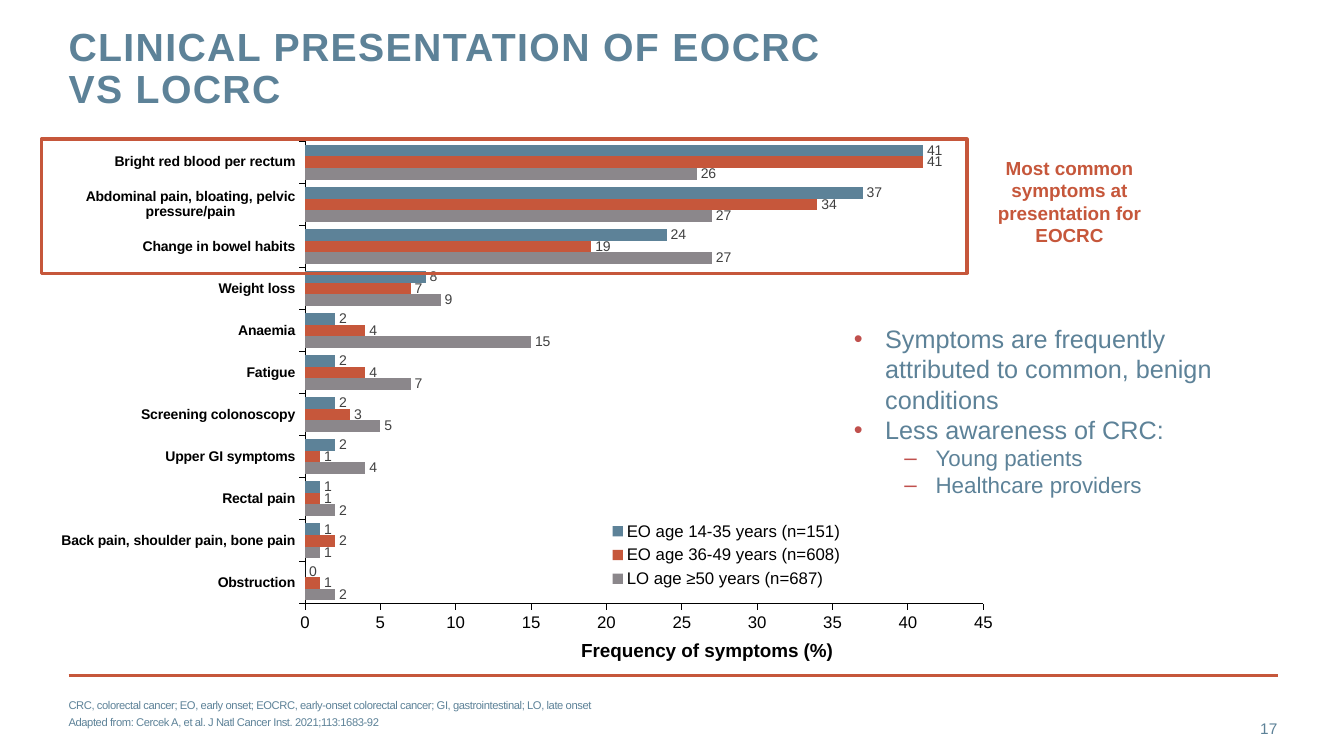
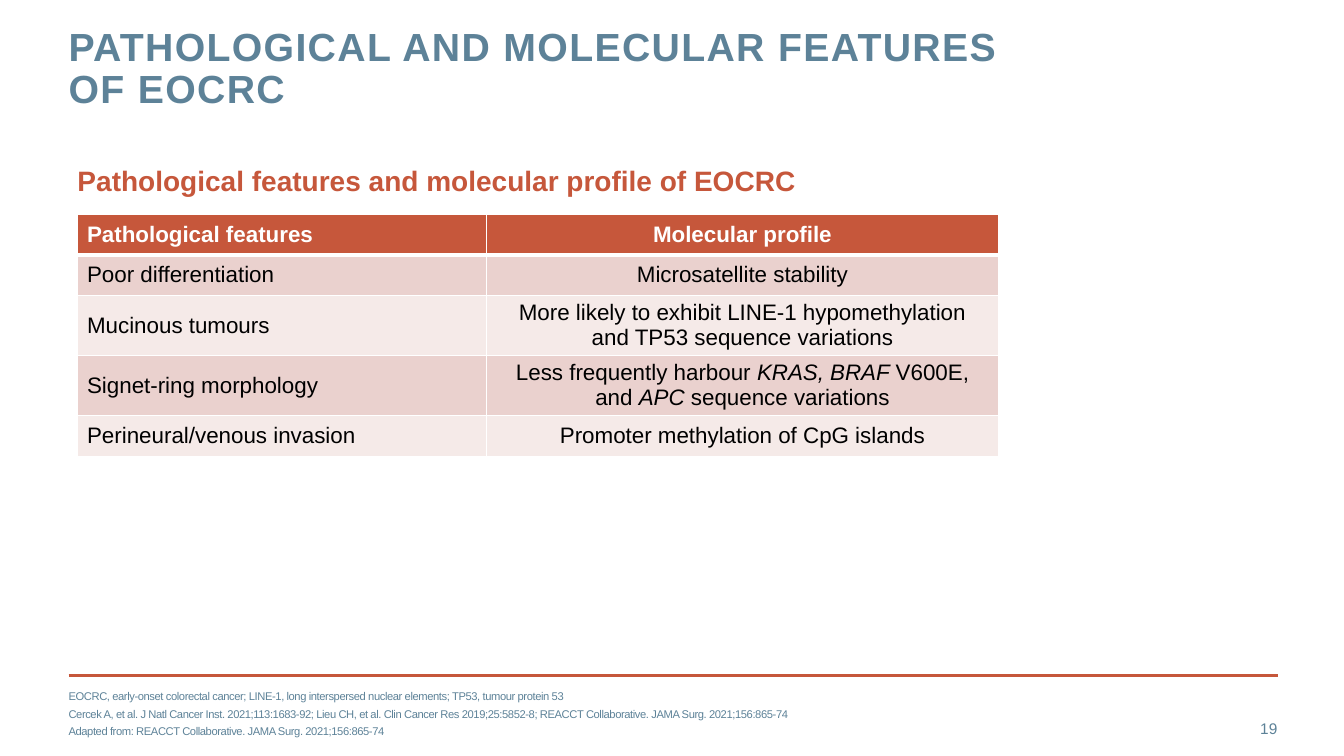
from dataclasses import dataclass
from typing import Any

from lxml import etree
from pptx import Presentation
from pptx.chart.data import CategoryChartData
from pptx.dml.color import RGBColor
from pptx.enum.chart import XL_CHART_TYPE, XL_LABEL_POSITION, XL_LEGEND_POSITION, XL_TICK_MARK
from pptx.enum.shapes import MSO_CONNECTOR, MSO_SHAPE
from pptx.enum.text import MSO_ANCHOR, MSO_AUTO_SIZE, PP_ALIGN
from pptx.oxml.ns import qn
from pptx.util import Inches, Pt

LEFT, CENTER, RIGHT = PP_ALIGN.LEFT, PP_ALIGN.CENTER, PP_ALIGN.RIGHT
TOP, MIDDLE = MSO_ANCHOR.TOP, MSO_ANCHOR.MIDDLE
NO_AUTOFIT = MSO_AUTO_SIZE.NONE
STRAIGHT, RECTANGLE = MSO_CONNECTOR.STRAIGHT, MSO_SHAPE.RECTANGLE
BAR_CLUSTERED = XL_CHART_TYPE.BAR_CLUSTERED
OUTSIDE_END = XL_LABEL_POSITION.OUTSIDE_END
LEGEND_RIGHT = XL_LEGEND_POSITION.RIGHT
TICK_OUTSIDE, TICK_NONE = XL_TICK_MARK.OUTSIDE, XL_TICK_MARK.NONE

BLUE = RGBColor(0x5D, 0x82, 0x98)
ORANGE = RGBColor(0xC6, 0x57, 0x3B)
GREY = RGBColor(0x8B, 0x87, 0x8B)
DARK_GREY = RGBColor(0x40, 0x40, 0x40)
BULLET_RED = RGBColor(0xC0, 0x50, 0x4D)
BLACK = RGBColor(0, 0, 0)
WHITE = RGBColor(0xFF, 0xFF, 0xFF)
BAND_DARK = RGBColor(0xEA, 0xD1, 0xCE)
BAND_LIGHT = RGBColor(0xF5, 0xEA, 0xE8)

SLIDE_WIDTH, SLIDE_HEIGHT = Inches(13.33), Inches(7.5)
COLUMN, ROW = SLIDE_WIDTH / 100, SLIDE_HEIGHT / 100
TITLE_ONLY = 5


@dataclass(frozen=True)
class Area:
    column: float
    row: float
    columns: float
    rows: float

    def box(self) -> tuple[int, int, int, int]:
        return (round(self.column * COLUMN), round(self.row * ROW),
                round(self.columns * COLUMN), round(self.rows * ROW))


@dataclass(frozen=True)
class Style:
    size: float
    color: RGBColor
    bold: bool = False
    tracking: int = 0


@dataclass(frozen=True)
class Run:
    text: str
    italic: bool = False


@dataclass(frozen=True)
class Bullet:
    character: str
    margin: float


@dataclass(frozen=True)
class Line:
    runs: tuple[Run, ...]
    style: Style
    bullet: Bullet | None = None


@dataclass(frozen=True)
class Series:
    name: str
    values: tuple[int, ...]
    color: RGBColor


TITLE = Style(28, BLUE, True, 100)
FOOTNOTE = Style(8, BLUE, False, -30)
PAGE_NUMBER = Style(11, BLUE)
SUBTITLE = Style(20, ORANGE, True)
CALLOUT = Style(13.5, ORANGE, True)
AXIS_TITLE = Style(13.5, BLACK, True)
POINT = Style(18, BLUE)
SUBPOINT = Style(16, BLUE)
TABLE_HEADER = Style(16, WHITE, True)
TABLE_BODY = Style(16, BLACK)
CATEGORY_LABEL = Style(10, BLACK, True)
CHART_LABEL = Style(12, BLACK)
DATA_LABEL = Style(10, DARK_GREY)

DOT, DASH = Bullet("•", 0.31), Bullet("–", 0.81)
HANGING = 0.31

TITLE_AREA = Area(5.1, 3.6, 71.7, 11.73)
FOOTNOTE_AREA = Area(5.1, 91.73, 83.5, 5.33)
NUMBER_AREA = Area(88.6, 93.73, 6.45, 5.33)
RULE_AREA = Area(5.1, 89.33, 90, 0)

CATEGORIES = (
    "Obstruction", "Back pain, shoulder pain, bone pain", "Rectal pain", "Upper GI symptoms",
    "Screening colonoscopy", "Fatigue", "Anaemia", "Weight loss", "Change in bowel habits",
    "Abdominal pain, bloating, pelvic pressure/pain", "Bright red blood per rectum",
)
SYMPTOMS = (
    Series("LO age ≥50 years (n=687)", (2, 1, 2, 4, 5, 7, 15, 9, 27, 27, 26), GREY),
    Series("EO age 36-49 years (n=608)", (1, 2, 1, 1, 3, 4, 4, 7, 19, 34, 41), ORANGE),
    Series("EO age 14-35 years (n=151)", (0, 1, 1, 2, 2, 2, 2, 8, 24, 37, 41), BLUE),
)
FEATURES = (
    ("Pathological features", (Run("Molecular profile"),)),
    ("Poor differentiation", (Run("Microsatellite stability"),)),
    ("Mucinous tumours",
     (Run("More likely to exhibit LINE-1 hypomethylation\nand TP53 sequence variations"),)),
    ("Signet-ring morphology",
     (Run("Less frequently harbour "), Run("KRAS, BRAF ", True), Run("V600E, and "),
      Run("APC", True), Run(" sequence variations"))),
    ("Perineural/venous invasion", (Run("Promoter methylation of CpG islands"),)),
)


def apply(target: Any, values: dict[str, Any]) -> None:
    for name, value in values.items():
        setattr(target, name, value)


def format_font(font: Any, style: Style, italic: bool = False) -> None:
    apply(font, {"name": "Arial", "size": Pt(style.size), "bold": style.bold, "italic": italic})
    font.color.rgb = style.color


def plain(text: str, style: Style, bullet: Bullet | None = None) -> Line:
    return Line((Run(text),), style, bullet)


def add_bullet(paragraph: Any, bullet: Bullet) -> None:
    properties = paragraph._p.get_or_add_pPr()
    properties.set("marL", str(Inches(bullet.margin)))
    properties.set("indent", str(-Inches(HANGING)))
    color = etree.SubElement(properties, qn("a:buClr"))
    etree.SubElement(color, qn("a:srgbClr"), val=str(BULLET_RED))
    etree.SubElement(properties, qn("a:buFont"), typeface="Arial")
    etree.SubElement(properties, qn("a:buChar"), char=bullet.character)


def write(frame: Any, lines: list[Line], alignment: Any = LEFT, gap: float = 0) -> None:
    for index, line in enumerate(lines):
        paragraph = frame.add_paragraph() if index else frame.paragraphs[0]
        if line.bullet:
            add_bullet(paragraph, line.bullet)
        paragraph.alignment = alignment
        if index:
            paragraph.space_before = Pt(gap)
        for part in line.runs:
            for position, piece in enumerate(part.text.split("\n")):
                if position:
                    paragraph.add_line_break()
                run = paragraph.add_run()
                run.text = piece
                format_font(run.font, line.style, part.italic)
                if line.style.tracking:
                    run._r.get_or_add_rPr().set("spc", str(line.style.tracking))


def format_frame(frame: Any, anchor: Any, inset: bool) -> None:
    apply(frame, {"word_wrap": True, "auto_size": NO_AUTOFIT, "vertical_anchor": anchor})
    if not inset:
        apply(frame, dict.fromkeys(("margin_left", "margin_top", "margin_right", "margin_bottom"), 0))


def add_text(slide: Any, area: Area, lines: list[Line], alignment: Any = LEFT,
             anchor: Any = TOP, inset: bool = True, gap: float = 0) -> None:
    frame = slide.shapes.add_textbox(*area.box()).text_frame
    format_frame(frame, anchor, inset)
    write(frame, lines, alignment, gap)


def add_base_slide(presentation: Any, title: str, number: str, footnotes: list[str]) -> Any:
    slide = presentation.slides.add_slide(presentation.slide_layouts[TITLE_ONLY])
    heading = slide.shapes.title
    apply(heading, dict(zip(("left", "top", "width", "height"), TITLE_AREA.box())))
    format_frame(heading.text_frame, TOP, False)
    write(heading.text_frame, [plain(title, TITLE)])
    heading.text_frame.paragraphs[0].line_spacing = Pt(30)

    left, top, width, _ = RULE_AREA.box()
    rule = slide.shapes.add_connector(STRAIGHT, left, top, left + width, top)
    rule.line.color.rgb = ORANGE
    rule.line.width = Pt(2)
    etree.SubElement(rule._element.spPr, qn("a:effectLst"))

    add_text(slide, FOOTNOTE_AREA, [plain(note, FOOTNOTE) for note in footnotes],
             anchor=MIDDLE, inset=False, gap=3)
    add_text(slide, NUMBER_AREA, [plain(number, PAGE_NUMBER)], RIGHT, MIDDLE, False)
    return slide


def place_in_chart(element: Any, index: int, shares: dict[str, float], inner: bool = False) -> None:
    for existing in element.findall(qn("c:layout")):
        element.remove(existing)
    layout = etree.Element(qn("c:layout"))
    manual = etree.SubElement(layout, qn("c:manualLayout"))
    if inner:
        etree.SubElement(manual, qn("c:layoutTarget"), val="inner")
    for name in ("xMode", "yMode"):
        etree.SubElement(manual, qn(f"c:{name}"), val="edge")
    for name, share in shares.items():
        etree.SubElement(manual, qn(f"c:{name}"), val=str(share))
    element.insert(index, layout)


def add_symptom_chart(slide: Any, area: Area) -> None:
    data = CategoryChartData(number_format="0")
    data.categories = CATEGORIES
    for group in SYMPTOMS:
        data.add_series(group.name, group.values)
    chart = slide.shapes.add_chart(BAR_CLUSTERED, *area.box(), data).chart
    apply(chart, {"has_title": False, "has_legend": True})
    format_font(chart.font, CHART_LABEL)

    plot = chart.plots[0]
    apply(plot, {"gap_width": 64, "overlap": 0, "vary_by_categories": False})
    for series, group in zip(plot.series, SYMPTOMS):
        series.format.fill.solid()
        series.format.fill.fore_color.rgb = group.color
        labels = series.data_labels
        apply(labels, {"show_value": True, "position": OUTSIDE_END})
        format_font(labels.font, DATA_LABEL)

    for axis, style in ((chart.category_axis, CATEGORY_LABEL), (chart.value_axis, CHART_LABEL)):
        apply(axis, {"has_major_gridlines": False, "major_tick_mark": TICK_OUTSIDE,
                     "minor_tick_mark": TICK_NONE})
        axis.format.line.color.rgb = BLACK
        axis.format.line.width = Pt(0.75)
        format_font(axis.tick_labels.font, style)
    apply(chart.value_axis, {"minimum_scale": 0, "maximum_scale": 45, "major_unit": 5})

    apply(chart.legend, {"position": LEGEND_RIGHT, "include_in_layout": True})
    format_font(chart.legend.font, CHART_LABEL)
    place_in_chart(chart.legend._element, 1, {"x": 0.58, "y": 0.75, "w": 0.25, "h": 0.15})
    plot_area = chart._chartSpace.chart.plotArea
    place_in_chart(plot_area, 0, {"x": 0.27, "y": 0.02, "w": 0.7, "h": 0.9}, True)


def add_borders(cell: Any, top: float, bottom: float) -> None:
    properties = cell._tc.get_or_add_tcPr()
    for side, width in (("L", 1), ("R", 1), ("T", top), ("B", bottom)):
        border = etree.SubElement(properties, qn(f"a:ln{side}"), w=str(Pt(width)))
        fill = etree.SubElement(border, qn("a:solidFill"))
        etree.SubElement(fill, qn("a:srgbClr"), val=str(WHITE))


def add_feature_table(slide: Any, area: Area, widths: tuple[float, ...]) -> None:
    table = slide.shapes.add_table(len(FEATURES), len(widths), *area.box()).table
    table.horz_banding = False
    for column, width in zip(table.columns, widths):
        column.width = round(width * COLUMN)
    for row, (feature, profile) in enumerate(FEATURES):
        color = (BAND_DARK if row % 2 else BAND_LIGHT) if row else ORANGE
        style = TABLE_BODY if row else TABLE_HEADER
        for column, (runs, alignment) in enumerate((((Run(feature),), LEFT), (profile, CENTER))):
            cell = table.cell(row, column)
            add_borders(cell, 3 if row == 1 else 1, 1 if row else 3)
            cell.fill.solid()
            cell.fill.fore_color.rgb = color
            cell.vertical_anchor = MIDDLE
            write(cell.text_frame, [Line(runs, style)], alignment)


def build_presentation_slide(presentation: Any) -> None:
    slide = add_base_slide(presentation, "CLINICAL PRESENTATION OF EOCRC\nVS LOCRC", "17", [
        "CRC, colorectal cancer; EO, early onset; EOCRC, early-onset colorectal cancer; "
        "GI, gastrointestinal; LO, late onset",
        "Adapted from: Cercek A, et al. J Natl Cancer Inst. 2021;113:1683-92",
    ])
    add_text(slide, Area(72, 20, 15.15, 13.47),
             [plain("Most common symptoms at presentation for EOCRC", CALLOUT)], CENTER)
    add_symptom_chart(slide, Area(3.23, 17.33, 72.1, 68))
    highlight = slide.shapes.add_shape(RECTANGLE, *Area(3.08, 18.4, 68.87, 17.73).box())
    highlight.shadow.inherit = False
    highlight.fill.background()
    highlight.line.color.rgb = ORANGE
    highlight.line.width = Pt(2.25)
    add_text(slide, Area(39.3, 83.87, 26.63, 4.4),
             [plain("Frequency of symptoms (%)", AXIS_TITLE)], CENTER)
    add_text(slide, Area(62.8, 42.13, 32.26, 25.6), [
        plain("Symptoms are frequently attributed to common, benign conditions", POINT, DOT),
        plain("Less awareness of CRC:", POINT, DOT),
        plain("Young patients", SUBPOINT, DASH),
        plain("Healthcare providers", SUBPOINT, DASH),
    ])


def build_features_slide(presentation: Any) -> None:
    slide = add_base_slide(presentation, "PATHOLOGICAL AND MOLECULAR FEATURES OF EOCRC", "19", [
        "EOCRC, early-onset colorectal cancer; LINE-1, long interspersed nuclear elements; "
        "TP53, tumour protein 53",
        "Cercek A, et al. J Natl Cancer Inst. 2021;113:1683-92; Lieu CH, et al. Clin Cancer Res "
        "2019;25:5852-8; REACCT Collaborative. JAMA Surg. 2021;156:865-74",
        "Adapted from: REACCT Collaborative. JAMA Surg. 2021;156:865-74",
    ])
    add_feature_table(slide, Area(5.73, 28.3, 68.57, 27.03), (30.46, 38.11))
    add_text(slide, Area(5.03, 21, 90, 7),
             [plain("Pathological features and molecular profile of EOCRC", SUBTITLE)])


def main() -> None:
    presentation = Presentation()
    apply(presentation, {"slide_width": SLIDE_WIDTH, "slide_height": SLIDE_HEIGHT})
    build_presentation_slide(presentation)
    build_features_slide(presentation)
    presentation.save("out.pptx")


if __name__ == "__main__":
    main()
